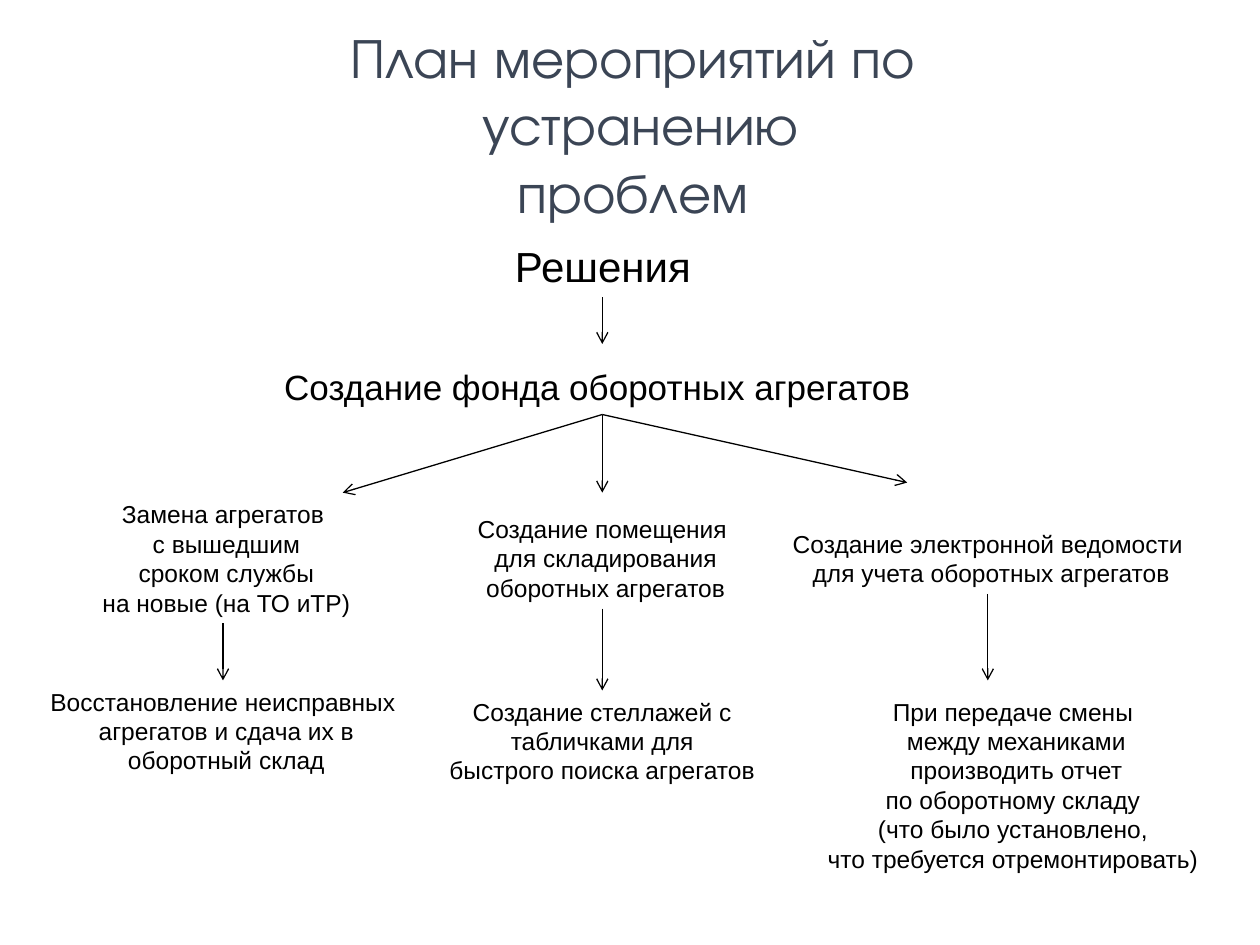
"""Build the action plan slide: a solutions tree with three branches."""
from pptx import Presentation
from pptx.dml.color import RGBColor
from pptx.enum.shapes import MSO_CONNECTOR as CONN
from pptx.enum.text import MSO_ANCHOR as ANCHOR, MSO_AUTO_SIZE as FIT, PP_ALIGN as ALIGN
from pptx.oxml.ns import qn
from pptx.util import Inches, Pt
from lxml.etree import SubElement

TITLE = "План мероприятий по\v устранению проблем"
ROOT = ["Решения"]
GOAL = ["Создание фонда оборотных агрегатов "]
BRANCHES = [
    {
        "axis": 1.77, "tip": (2.72, 3.91), "width": 2.52, "link_end": 5.4,
        "action": ["Замена агрегатов", " с вышедшим", " сроком службы",
                   " на новые (на ТО иТР)"],
        "result": ["Восстановление неисправных", " агрегатов и сдача их в",
                   " оборотный склад"],
        "result_box": (0.29, 5.4, 2.96),
    },
    {
        "axis": 4.78, "tip": (4.78, 3.91), "width": 2.19, "link_end": 5.48,
        "action": ["Создание помещения", " для складирования", " оборотных агрегатов"],
        "result": ["Создание стеллажей с", " табличками для ",
                   "быстрого поиска агрегатов"],
        "result_box": (3.46, 5.48, 2.64),
    },
    {
        "axis": 7.84, "tip": (7.2, 3.83), "width": 3.32, "link_end": 5.4,
        "action": ["Создание электронной ведомости", " для учета оборотных агрегатов"],
        "result": ["При передаче смены", " между механиками", " производить отчет",
                   " по оборотному складу ", "(что было установлено,",
                   "что требуется отремонтировать)"],
        "result_box": (6.46, 5.48, 3.16),
    },
]
THEME = {
    "title_font": "TeX Gyre Adventor", "font": "Arial",
    "title": "3B4555", "ink": "000000",
    "title_size": 32, "root_size": 24, "goal_size": 20, "body_size": 14,
    "line": 0.75,
}
TRUNK_X, HUB_Y, ACTION_MID = 4.78, 3.29, 4.43


def text_height(lines, size):
    return len(lines) * size * 1.2 / 72 + 0.1


def write(sp, lines, size, font=THEME["font"], color=THEME["ink"], wrap=False):
    tf = sp.text_frame
    tf.word_wrap, tf.auto_size = wrap, FIT.SHAPE_TO_FIT_TEXT
    tf.vertical_anchor = ANCHOR.TOP
    for i, line in enumerate(lines):
        p = tf.paragraphs[0] if i == 0 else tf.add_paragraph()
        p.text, p.alignment = line, ALIGN.CENTER
        for r in p.runs:
            r.font.name, r.font.size = font, Pt(size)
            r.font.color.rgb = RGBColor.from_string(color)


def add_text(s, lines, left, top, width, size=THEME["body_size"]):
    box = (left, top, width, text_height(lines, size))
    write(s.shapes.add_textbox(*map(Inches, box)), lines, size)


def add_arrow(s, start, end):
    sp = s.shapes.add_connector(CONN.STRAIGHT, *map(Inches, (*start, *end)))
    sp.line.width = Pt(THEME["line"])
    sp.line.color.rgb = RGBColor.from_string(THEME["ink"])
    SubElement(sp.line._get_or_add_ln(), qn("a:tailEnd"), type="arrow")
    SubElement(sp._element.spPr, qn("a:effectLst"))


def main():
    prs = Presentation()
    prs.slide_width, prs.slide_height = Inches(10), Inches(7.5)
    s = prs.slides.add_slide(prs.slide_layouts[5])

    title = s.shapes.title
    title.left, title.top = Inches(2.64), Inches(0.13)
    title.width, title.height = Inches(4.77), Inches(1.18)
    write(title, [TITLE], THEME["title_size"], font=THEME["title_font"],
          color=THEME["title"], wrap=True)

    add_text(s, ROOT, 3.98, 1.86, 1.61, size=THEME["root_size"])
    add_arrow(s, (TRUNK_X, 2.36), (TRUNK_X, 2.73))
    add_text(s, GOAL, 2.14, 2.85, 5.28, size=THEME["goal_size"])

    for branch in BRANCHES:
        x, width, action = branch["axis"], branch["width"], branch["action"]
        height = text_height(action, THEME["body_size"])
        top = ACTION_MID - height / 2
        add_arrow(s, (TRUNK_X, HUB_Y), branch["tip"])
        add_text(s, action, x - width / 2, top, width)
        add_arrow(s, (x, top + height), (x, branch["link_end"]))
        add_text(s, branch["result"], *branch["result_box"])

    prs.save("out.pptx")


if __name__ == "__main__":
    main()
